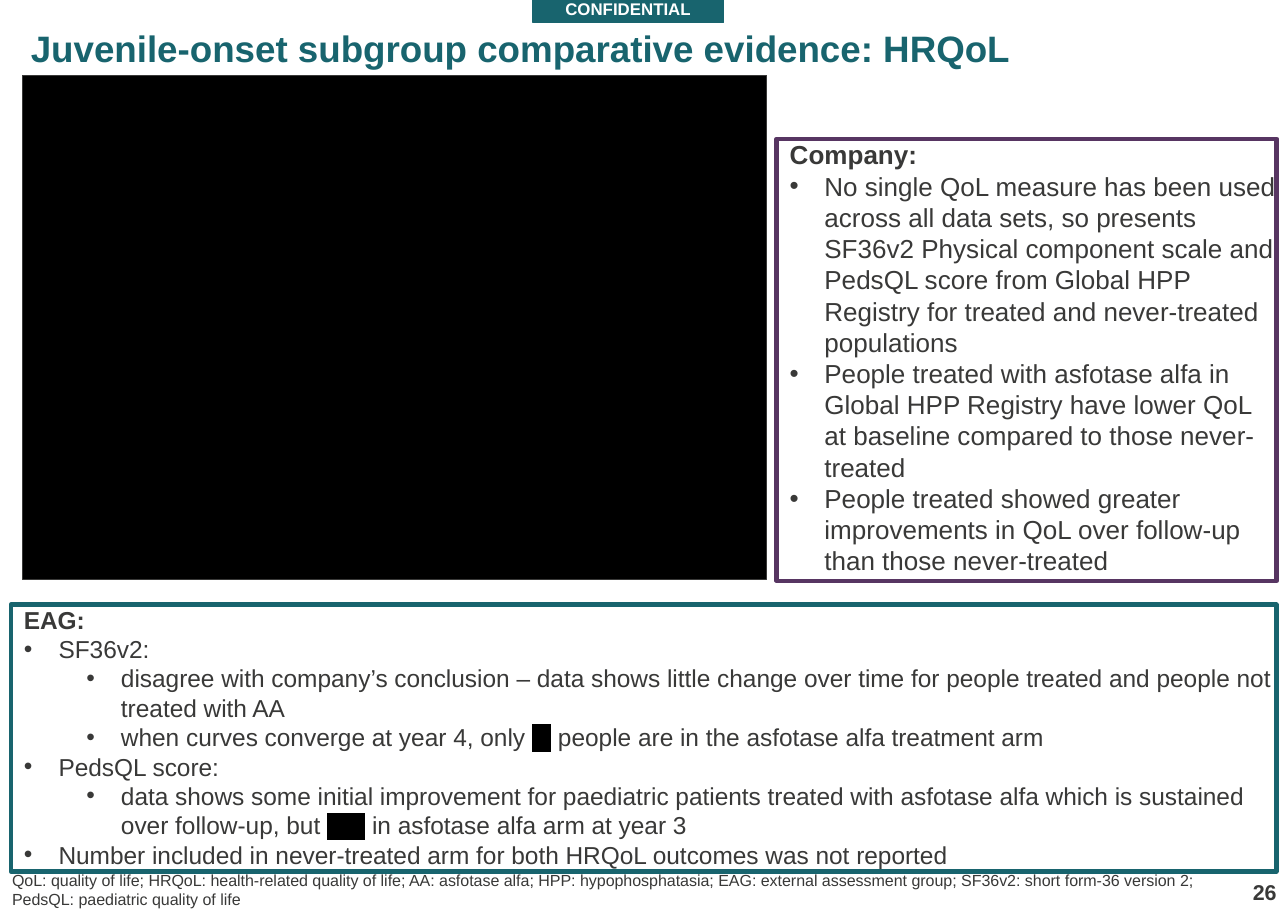
from lxml.etree import SubElement
from pptx import Presentation
from pptx.dml.color import RGBColor
from pptx.enum.shapes import MSO_SHAPE
from pptx.enum.text import MSO_ANCHOR, MSO_AUTO_SIZE, PP_ALIGN
from pptx.oxml.ns import qn
from pptx.util import Cm, Pt

TEAL, PLUM, GREY, WHITE, BLACK = "18646E", "573562", "393938", "FFFFFF", "000000"
INDENT = {0: (0.3, 0), 1: (1.1, -0.8), 2: (2.54, -0.8)}

COMPANY = [
    (0, "Company:"),
    (1, "No single QoL measure has been used across all data sets, so presents SF36v2 Physical "
        "component scale and PedsQL score from Global HPP Registry for treated and never-treated populations"),
    (1, "People treated with asfotase alfa in Global HPP Registry have lower QoL at baseline "
        "compared to those never-treated"),
    (1, "People treated showed greater improvements in QoL over follow-up than those never-treated"),
]
EAG = [
    (0, "EAG:"),
    (1, "SF36v2:"),
    (2, "disagree with company’s conclusion – data shows little change over time for people treated "
        "and people not treated with AA"),
    (2, "when curves converge at year 4, only |**| people are in the asfotase alfa treatment arm"),
    (1, "PedsQL score:"),
    (2, "data shows some initial improvement for paediatric patients treated with asfotase alfa "
        "which is sustained over follow-up, but |****| in asfotase alfa arm at year 3"),
    (1, "Number included in never-treated arm for both HRQoL outcomes was not reported"),
]
NOTE = ("QoL: quality of life; HRQoL: health-related quality of life; AA: asfotase alfa; "
        "HPP: hypophosphatasia; EAG: external assessment group; SF36v2: short form-36 version 2; "
        "PedsQL: paediatric quality of life")


def color(code):
    return RGBColor.from_string(code)


def place(shape, box):
    shape.left, shape.top, shape.width, shape.height = map(Cm, box)


def style(para, size, code=GREY, bold=False):
    font = para.font
    font.name, font.size, font.bold = "Arial", Pt(size), bold
    font.color.rgb = color(code)


def setup(frame, pad=(0, 0), anchor=MSO_ANCHOR.TOP):
    frame.word_wrap = True
    frame.auto_size = MSO_AUTO_SIZE.NONE
    frame.vertical_anchor = anchor
    frame.margin_left = frame.margin_right = Cm(pad[0])
    frame.margin_top = frame.margin_bottom = Cm(pad[1])


def block(slide, box, fill, edge, width):
    shape = slide.shapes.add_shape(MSO_SHAPE.RECTANGLE, *map(Cm, box))
    shape.shadow.inherit = False
    shape.fill.solid()
    shape.fill.fore_color.rgb = color(fill)
    shape.line.color.rgb = color(edge)
    shape.line.width = Pt(width)
    return shape


def label(slide, box, text, size, bold=False, align=PP_ALIGN.LEFT, **frame):
    shape = slide.shapes.add_textbox(*map(Cm, box))
    setup(shape.text_frame, **frame)
    para = shape.text_frame.paragraphs[0]
    para.text, para.alignment = text, align
    style(para, size, bold=bold)


def redact(run):
    run.font.color.rgb = color(BLACK)
    run.font.underline = True
    mark = SubElement(run.font._element, qn("a:highlight"))
    SubElement(mark, qn("a:srgbClr"), val=BLACK)


def bullet(para, level):
    props = para._p.get_or_add_pPr()
    left, hang = INDENT[level]
    props.set("marL", str(Cm(left)))
    props.set("indent", str(Cm(hang)))
    if level:
        SubElement(props, qn("a:buFont"), typeface="Arial")
        SubElement(props, qn("a:buChar"), char="•")
    else:
        SubElement(props, qn("a:buNone"))


def panel(holder, box, items, size, edge):
    place(holder, box)
    holder.fill.solid()
    holder.fill.fore_color.rgb = color(WHITE)
    holder.line.color.rgb = color(edge)
    holder.line.width = Pt(3)
    frame = holder.text_frame
    setup(frame)
    for i, (level, text) in enumerate(items):
        para = frame.add_paragraph() if i else frame.paragraphs[0]
        para.level = max(level - 1, 0)
        para.space_before = Pt(0)
        bullet(para, level)
        style(para, size, bold=level == 0)
        for j, part in enumerate(text.split("|")):
            run = para.add_run()
            run.text = part
            if j % 2:
                redact(run)


def header(slide, box):
    left, top, width, height = box
    title = slide.shapes.title
    place(title, (left + 0.71, top + 0.13, width - 1.4, height))
    title.text = "Juvenile-onset subgroup comparative evidence: HRQoL"
    setup(title.text_frame)
    para = title.text_frame.paragraphs[0]
    para.alignment, para.line_spacing = PP_ALIGN.LEFT, Pt(42)
    style(para, 24, TEAL, True)

    tag = block(slide, (left + 12.29, top - 0.13, 4.39, 0.66), TEAL, TEAL, 0.75)
    setup(tag.text_frame, (0.1, 0.1), MSO_ANCHOR.MIDDLE)
    para = tag.text_frame.paragraphs[0]
    para.text, para.alignment = "CONFIDENTIAL", PP_ALIGN.CENTER
    style(para, 11, WHITE, True)


def footer(slide, box):
    left, top, width, height = box
    label(slide, (left + 0.03, top, width - 0.72, height), NOTE, 10.5, pad=(0.25, 0.13))
    label(slide, (left + width - 1.66, top, 1.4, 0.91), "26", 14, True,
          PP_ALIGN.RIGHT, anchor=MSO_ANCHOR.BOTTOM)


def main():
    deck = Presentation()
    deck.slide_width, deck.slide_height = Cm(29.7), Cm(21)
    slide = deck.slides.add_slide(deck.slide_layouts[3])
    header(slide, (0, 0, 29.7, 2.13))
    block(slide, (0.51, 1.73, 17.17, 11.63), BLACK, GREY, 0.25)
    panel(slide.placeholders[1], (17.91, 3.2, 11.53, 10.19), COMPANY, 17, PLUM)
    panel(slide.placeholders[2], (0.25, 13.94, 29.18, 6.15), EAG, 16, TEAL)
    footer(slide, (0, 19.94, 29.7, 1.14))
    deck.save("out.pptx")


if __name__ == "__main__":
    main()
